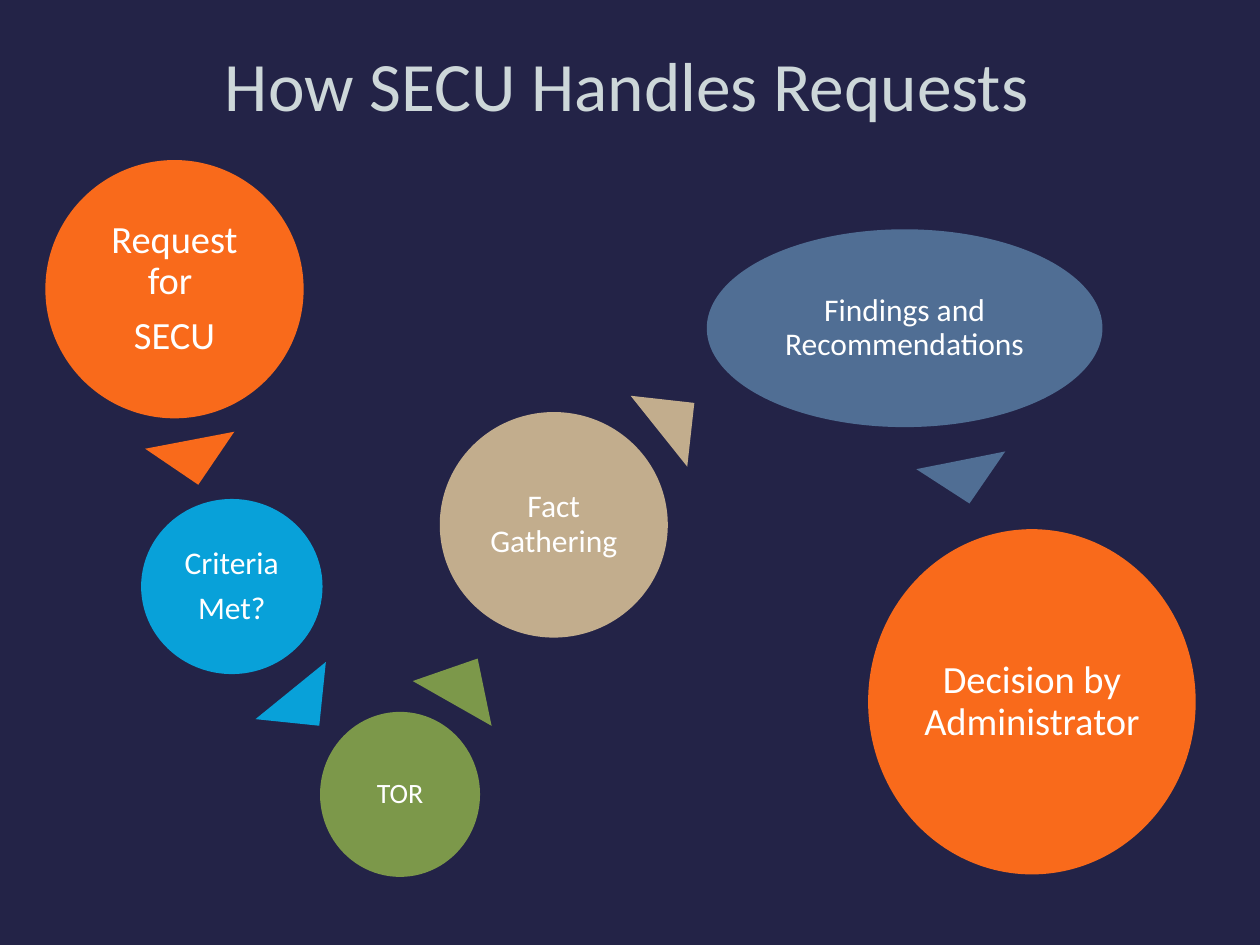
import pptx
import pptx.util
import pptx.dml.color
import pptx.enum.shapes
import pptx.enum.text

Inches = pptx.util.Inches
Pt = pptx.util.Pt
SHAPE = pptx.enum.shapes.MSO_SHAPE

COLORS = {
    "background": "232347",
    "title": "CDD7D9",
    "text": "FFFFFF",
    "orange": "F96A1B",
    "blue": "08A1D9",
    "green": "7C984A",
    "tan": "C2AD8D",
    "slate": "506E94",
}
FONT = "Calibri"

STEPS = [
    ((0.36, 1.27, 2.05, 2.05), "orange", ["Request for ", "SECU"], 22),
    ((1.12, 3.96, 1.44, 1.39), "blue", ["Criteria", "Met?"], 18),
    ((2.54, 5.65, 1.27, 1.31), "green", ["TOR"], 16),
    ((3.49, 3.27, 1.81, 1.79), "tan", ["Fact Gathering"], 18),
    ((5.61, 1.82, 3.14, 1.57), "slate", ["Findings and Recommendations"], 18),
    ((6.89, 4.2, 2.6, 2.74), "orange", ["Decision by Administrator"], 22),
]
POINTERS = [
    ((1.18, 3.49, 0.72, 0.36), "orange", 169.2),
    ((2.06, 5.44, 0.72, 0.36), "blue", 140.9),
    ((3.33, 5.2, 0.72, 0.41), "green", 29.6),
    ((5.01, 3.13, 0.72, 0.36), "tan", 51.4),
    ((7.3, 3.65, 0.72, 0.35), "slate", 168.7),
]


def color(name):
    """Return the named palette colour."""
    return pptx.dml.color.RGBColor.from_string(COLORS[name])


def add_filled_shape(slide, preset, box, fill):
    """Add a flat preset shape without an outline."""
    shape = slide.shapes.add_shape(preset, *map(Inches, box))
    shape.shadow.inherit = False
    shape.fill.solid()
    shape.fill.fore_color.rgb = color(fill)
    shape.line.fill.background()
    return shape


def write_text(shape, lines, size, text_color, inset):
    """Write centred paragraphs into the shape."""
    frame = shape.text_frame
    frame.word_wrap = True
    frame.vertical_anchor = pptx.enum.text.MSO_ANCHOR.MIDDLE
    frame.margin_left = frame.margin_right = Inches(inset)
    frame.margin_top = frame.margin_bottom = Inches(inset)
    for index, line in enumerate(lines):
        paragraph = frame.add_paragraph() if index else frame.paragraphs[0]
        paragraph.alignment = pptx.enum.text.PP_ALIGN.CENTER
        paragraph.line_spacing = 0.9
        if index < len(lines) - 1:
            paragraph.space_after = Pt(0.35 * size)
        run = paragraph.add_run()
        run.text = line
        run.font.name = FONT
        run.font.size = Pt(size)
        run.font.color.rgb = color(text_color)


def add_title(slide, box, text):
    """Add the slide heading."""
    title = slide.shapes.add_textbox(*map(Inches, box))
    write_text(title, [text], 39.6, "title", 0.05)
    title.text_frame.paragraphs[0].line_spacing = 1.0


def add_step(slide, box, fill, lines, size):
    """Add one labelled process step."""
    ellipse = add_filled_shape(slide, SHAPE.OVAL, box, fill)
    write_text(ellipse, lines, size, "text", 0.03)


def add_pointer(slide, box, fill, rotation):
    """Add a triangle that leads to the next step."""
    triangle = add_filled_shape(slide, SHAPE.ISOSCELES_TRIANGLE, box, fill)
    triangle.rotation = rotation


def main():
    """Build and save the presentation."""
    presentation = pptx.Presentation()
    presentation.slide_width = Inches(10)
    presentation.slide_height = Inches(7.5)
    slide = presentation.slides.add_slide(presentation.slide_layouts[6])
    slide.background.fill.solid()
    slide.background.fill.fore_color.rgb = color("background")
    add_title(slide, (0.85, 0.33, 8.25, 0.67), "How SECU Handles Requests")
    for step in STEPS:
        add_step(slide, *step)
    for pointer in POINTERS:
        add_pointer(slide, *pointer)
    presentation.save("out.pptx")


if __name__ == "__main__":
    main()
